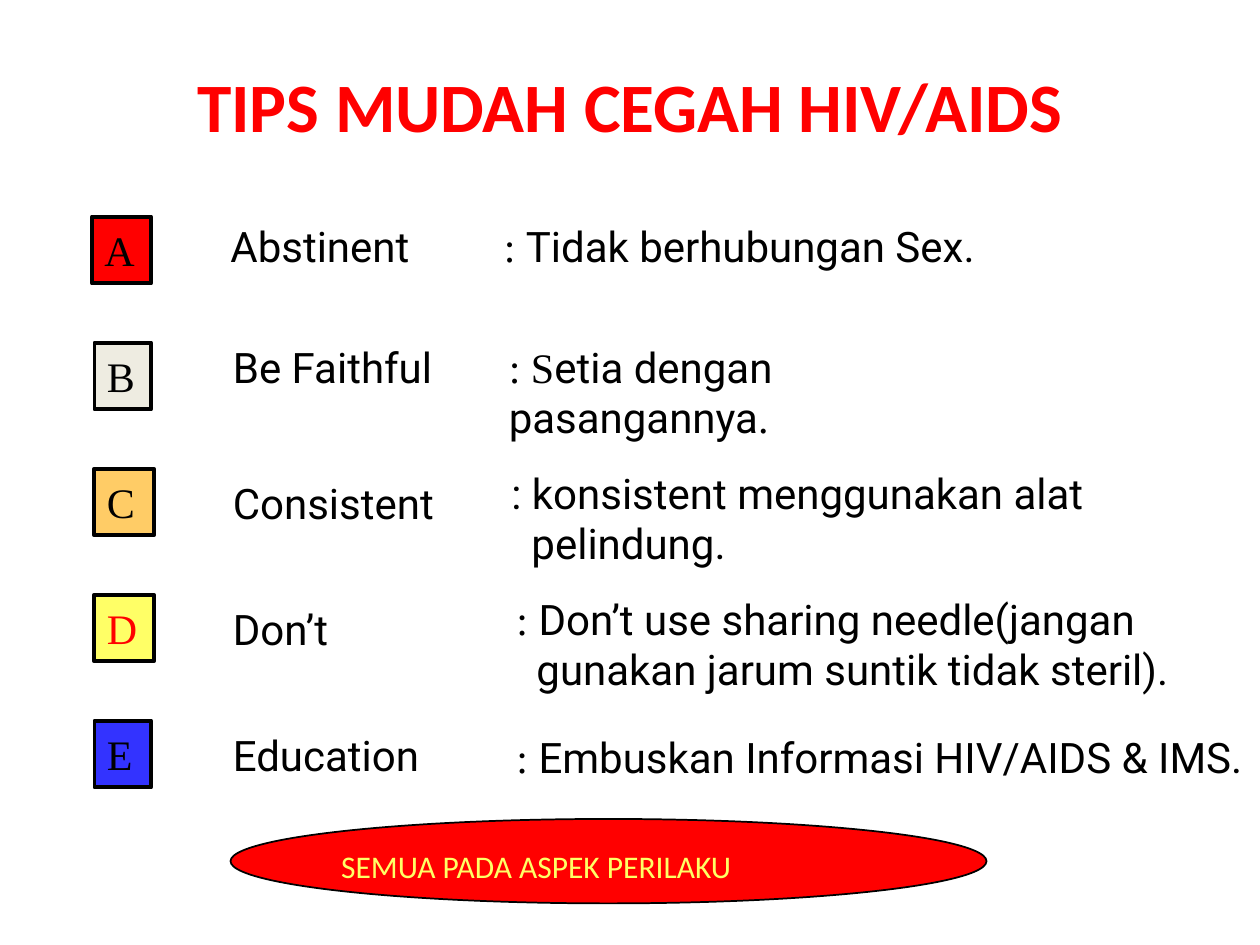
from pptx import Presentation
from pptx.dml.color import RGBColor
from pptx.enum.shapes import MSO_SHAPE as SHAPE
from pptx.enum.text import MSO_ANCHOR as ANCHOR, PP_ALIGN as ALIGN
from pptx.util import Inches, Pt

SERIF, SANS, HEAD = "Times New Roman", "Roboto", "Calibri"
ROW_TOP, ROW_STEP = 1.72, 1
TIPS = [
    ("A", "FF0000", "000000", 0.47, (1.73, 1.7, 1.81, 0.5), "Abstinent",
     (3.9, 1.7, 3.96, 0.5), [[(": ", SERIF), ("Tidak berhubungan Sex.", SANS)]]),
    ("B", "EEECE1", "000000", 0.45, (1.75, 2.66, 2.01, 0.5), "Be Faithful",
     (3.94, 2.66, 4.1, 0.5),
     [[(": S", SERIF), ("etia dengan pasangannya", SANS), (".", SERIF)]]),
    ("C", "FFCC66", "000000", 0.47, (1.75, 3.74, 1.98, 0.5), "Consistent",
     (3.96, 3.66, 4.85, 0.9),
     [[(": konsistent menggunakan alat", SANS)], [("pelindung.", SANS)]]),
    ("D", "FFFF66", "FF0000", 0.47, (1.75, 4.74, 1.1, 0.5), "Don’t",
     (4, 4.66, 5.47, 0.9),
     [[(": ", SERIF), ("Don’t use sharing needle(jangan", SANS)],
      [("gunakan jarum suntik tidak steril).", SANS)]]),
    ("E", "3333FF", "000000", 0.45, (1.75, 5.74, 1.86, 0.5), "Education",
     (4, 5.76, 6.01, 0.5),
     [[(": ", SERIF), ("Embuskan Informasi HIV/AIDS & IMS.", SANS)]]),
]


def rgb(value):
    """Turn a hex string into a colour."""
    return RGBColor.from_string(value)


def add_run(p, text, color, **font):
    """Add a run with the given font values."""
    r = p.add_run()
    r.text = text
    r.font.color.rgb = rgb(color)
    for name, value in font.items():
        setattr(r.font, name, value)


def add_box(s, shape, at, fill, width):
    """Draw a filled shape with a black outline."""
    sp = s.shapes.add_shape(shape, *map(Inches, at))
    sp.shadow.inherit = False
    sp.fill.solid()
    sp.fill.fore_color.rgb = rgb(fill)
    sp.line.color.rgb = rgb("000000")
    sp.line.width = Pt(width)
    return sp


def add_text(s, at, lines, color="000000", size=24, hang=0.16, first=0):
    """Place lines of (text, font) runs, later lines indented."""
    tf = s.shapes.add_textbox(*map(Inches, at)).text_frame
    tf.word_wrap = True
    for i, line in enumerate(lines):
        p = tf.add_paragraph() if i else tf.paragraphs[0]
        indent = hang if i else first
        if indent:
            p._p.get_or_add_pPr().set("marL", str(Inches(indent)))
        for text, font in line:
            add_run(p, text, color, name=font, size=Pt(size))


def add_title(s, text):
    """Fill the title placeholder."""
    sp = s.shapes.title
    places = dict(left=0.75, top=0.5, width=8.5, height=0.67)
    for name, value in places.items():
        setattr(sp, name, Inches(value))
    tf = sp.text_frame
    tf.vertical_anchor = ANCHOR.MIDDLE
    p = tf.paragraphs[0]
    p.alignment = ALIGN.CENTER
    add_run(p, text, "FF0000", name=HEAD, size=Pt(39.6), bold=True)


def add_tip(s, row, letter, fill, color, width, term_at, term, tip_at, tip):
    """Draw one row: letter box, term and explanation."""
    at = (1.2 - width if row == 0 else 0.75, ROW_TOP + row * ROW_STEP, width, 0.53)
    tf = add_box(s, SHAPE.RECTANGLE, at, fill, 2.25).text_frame
    tf.word_wrap = False
    p = tf.paragraphs[0]
    p.alignment = ALIGN.LEFT
    add_run(p, letter, color, name=SERIF, size=Pt(24))
    add_text(s, term_at, [[(term, SANS)]])
    add_text(s, tip_at, tip)


def main():
    """Build the slide."""
    prs = Presentation()
    prs.slide_width, prs.slide_height = Inches(10), Inches(7.5)
    s = prs.slides.add_slide(prs.slide_layouts[5])
    add_box(s, SHAPE.OVAL, (1.83, 6.5, 6, 0.67), "FF0000", 1)
    add_title(s, "TIPS MUDAH CEGAH HIV/AIDS")
    for row, tip in enumerate(TIPS):
        add_tip(s, row, *tip)
    add_text(s, (2.5, 6.67, 4.3, 0.4), [[("SEMUA PADA ASPEK PERILAKU", HEAD)]],
             color="FFFF66", size=18, first=0.11)
    prs.save("out.pptx")


if __name__ == "__main__":
    main()
